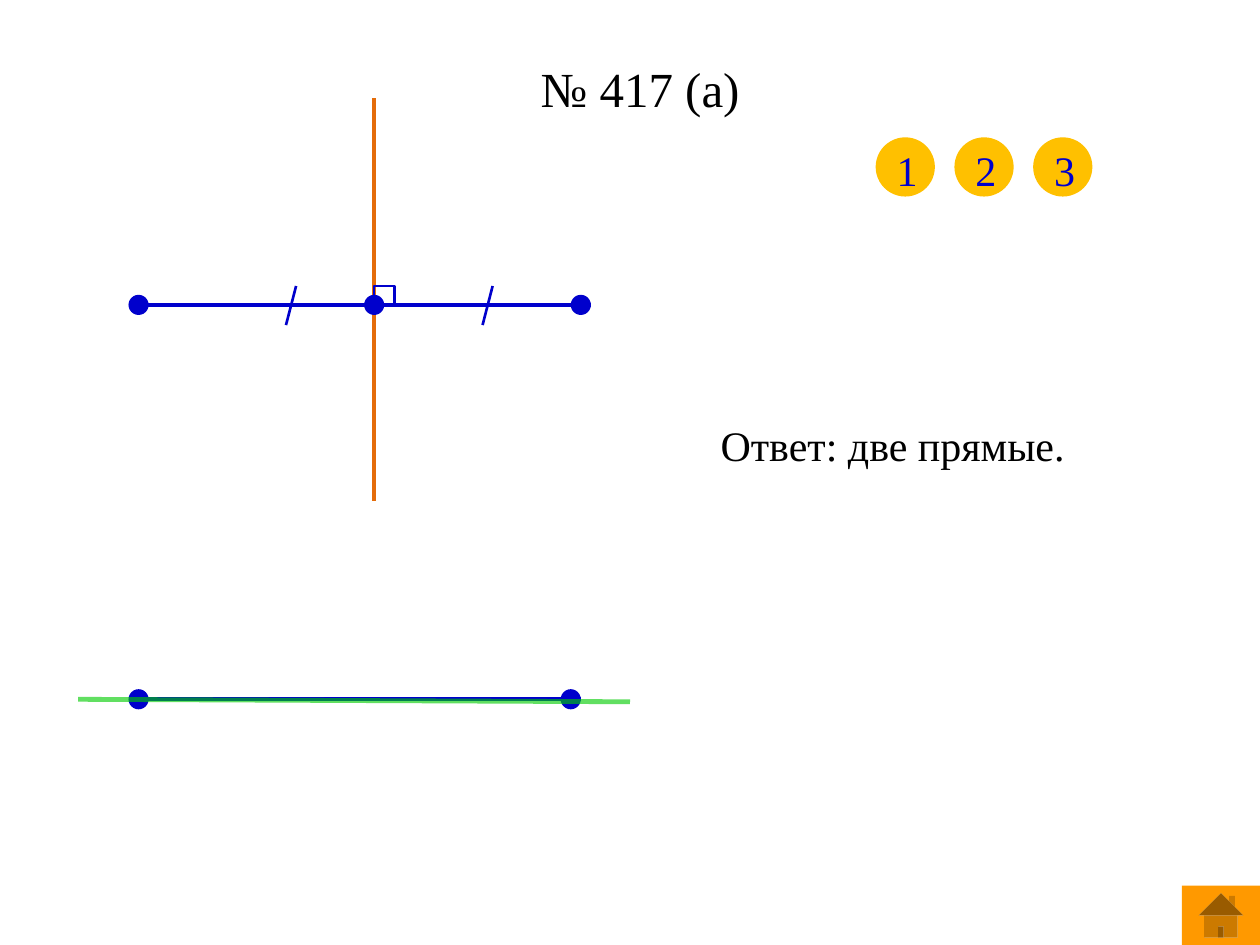
"""Build the slide for exercise 417 (а): two lines equidistant from two points."""
import lxml.etree
import pptx
import pptx.dml.color
import pptx.enum.shapes
import pptx.enum.text
import pptx.oxml.ns
import pptx.util

Inches = pptx.util.Inches
SHAPES = pptx.enum.shapes.MSO_SHAPE
ALIGN = pptx.enum.text.PP_ALIGN
ANCHOR = pptx.enum.text.MSO_ANCHOR

COLORS = {"blue": "0000CC", "orange": "E46C0A", "green": "00CC00",
          "gold": "FFC000", "button": "FF9900", "black": "000000"}
FONT = "Times New Roman"
TITLE = "№ 417 (а)"
ANSWER = "Ответ: две прямые."
STEPS = ["1", "2", "3"]
STEP_LEFT, STEP_TOP, STEP_SIZE, STEP_PITCH = 6.95, 1.09, 0.47, 0.625
DOT_SIZE = 0.16
UPPER, LOWER = 2.42, 5.55
DOTS = [(2.97, UPPER), (1.1, UPPER), (4.61, UPPER), (1.1, LOWER), (4.53, LOWER)]
PERPENDICULAR = (2.97, 0.78, 2.97, 3.98)
SEGMENTS = [(1.09, 4.61, UPPER), (3.05, 4.69, UPPER), (1.17, 2.89, UPPER), (1.09, 4.61, LOWER)]
TICKS = [2.27, 3.83]
COVERING_LINE = (5, 5.57, 0.62, 5.55)


def rgb(name):
    return pptx.dml.color.RGBColor.from_string(COLORS[name])


def add_line(page, ends, color, width, opacity=None):
    line = page.shapes.add_connector(
        pptx.enum.shapes.MSO_CONNECTOR.STRAIGHT, *[Inches(end) for end in ends])
    line.line.color.rgb = rgb(color)
    line.line.width = pptx.util.Pt(width)
    properties = line._element.spPr
    lxml.etree.SubElement(properties, pptx.oxml.ns.qn("a:effectLst"))
    if opacity:
        fill = properties.find(".//" + pptx.oxml.ns.qn("a:srgbClr"))
        alpha = lxml.etree.SubElement(fill, pptx.oxml.ns.qn("a:alpha"))
        alpha.set("val", str(opacity * 1000))


def add_shape(page, kind, place, fill=None, outline=None):
    shape = page.shapes.add_shape(kind, *[Inches(length) for length in place])
    shape.shadow.inherit = False
    if fill:
        shape.fill.solid()
        shape.fill.fore_color.rgb = rgb(fill)
    else:
        shape.fill.background()
    if outline:
        shape.line.color.rgb = rgb(outline)
        shape.line.width = pptx.util.Pt(1.5)
    else:
        shape.line.fill.background()
    return shape


def write(shape, text, size, color, align, anchor):
    frame = shape.text_frame
    frame.word_wrap = True
    frame.vertical_anchor = anchor
    para = frame.paragraphs[0]
    para.alignment = align
    span = para.add_run()
    span.text = text
    span.font.size = pptx.util.Pt(size)
    span.font.name = FONT
    span.font.color.rgb = rgb(color)
    return frame


def add_text(page, place, text, size, align, anchor):
    box = page.shapes.add_textbox(*[Inches(length) for length in place])
    write(box, text, size, "black", align, anchor)


def main():
    deck = pptx.Presentation()
    deck.slide_width, deck.slide_height = Inches(10), Inches(7.5)
    page = deck.slides.add_slide(deck.slide_layouts[6])

    add_line(page, PERPENDICULAR, "orange", 2.5)
    add_text(page, (4.14, 0.23, 1.88, 0.94), TITLE, 28, ALIGN.CENTER, ANCHOR.MIDDLE)
    add_shape(page, SHAPES.RECTANGLE, (2.97, 2.27, 0.16, 0.16), outline="blue")
    for left in TICKS:
        add_line(page, (left + 0.08, 2.27, left, 2.58), "blue", 1.5)
    for start, end, height in SEGMENTS:
        add_line(page, (start, height, end, height), "blue", 2.5)
    for x, y in DOTS:
        place = (x - DOT_SIZE / 2, y - DOT_SIZE / 2, DOT_SIZE, DOT_SIZE)
        add_shape(page, SHAPES.OVAL, place, "blue")

    for index, label in enumerate(STEPS):
        place = (STEP_LEFT + index * STEP_PITCH, STEP_TOP, STEP_SIZE, STEP_SIZE)
        step = add_shape(page, SHAPES.OVAL, place, "gold")
        frame = write(step, label, 24, "blue", ALIGN.CENTER, ANCHOR.MIDDLE)
        frame.margin_left = Inches(0.03)
        frame.margin_top = Inches(0.04)
        frame.margin_right = frame.margin_bottom = 0

    add_line(page, COVERING_LINE, "green", 2.75, opacity=61)
    add_text(page, (5.62, 3.28, 3.91, 0.51), ANSWER, 24, ALIGN.LEFT, ANCHOR.TOP)
    add_shape(page, SHAPES.ACTION_BUTTON_HOME, (9.38, 7.03, 0.62, 0.47), "button")
    deck.save("out.pptx")


if __name__ == "__main__":
    main()
